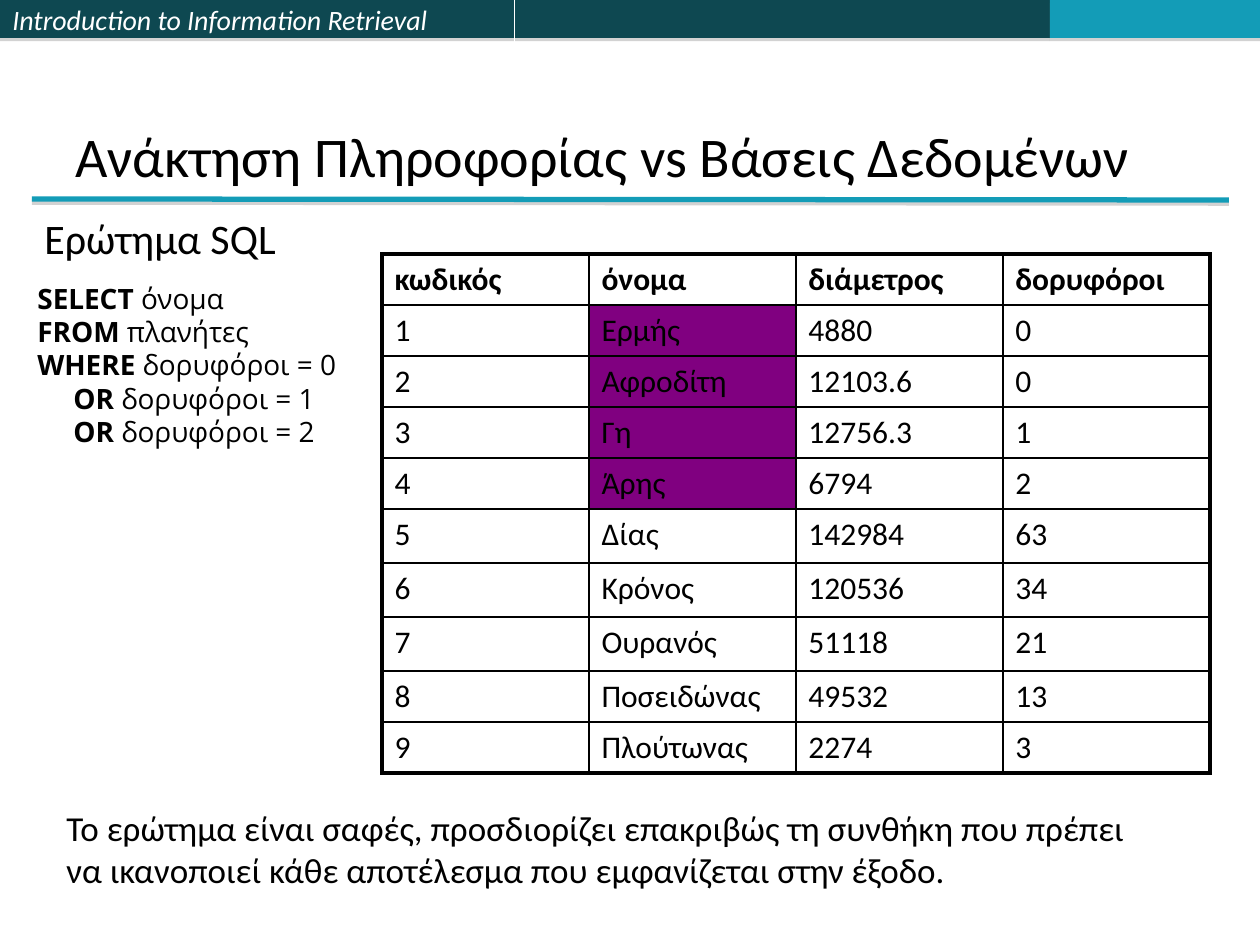
from lxml import etree
from pptx import Presentation
from pptx import util as u
from pptx.dml.color import RGBColor
from pptx.enum import shapes, text
from pptx.oxml.ns import qn

PX = 914400 // 126
BLACK, WHITE, DARK, TEAL, PURPLE = "000000", "FFFFFF", "0E4851", "139CB7", "800080"


def rgb(value):
    return RGBColor.from_string(value)


def write(frame, lines, size, font="Calibri", color=BLACK, italic=False, wrap=True,
          anchor=text.MSO_ANCHOR.TOP, spacing=None):
    """Fill a text frame; each line is a list of (words, bold) pairs."""
    frame.word_wrap = wrap
    frame.vertical_anchor = anchor
    for i, line in enumerate(lines):
        para = frame.add_paragraph() if i else frame.paragraphs[0]
        para.alignment = text.PP_ALIGN.LEFT
        if spacing:
            para.line_spacing = u.Pt(spacing)
        for words, bold in line:
            span = para.add_run()
            span.text = words
            span.font.size = u.Pt(size)
            span.font.name = font
            span.font.bold = bold
            span.font.italic = italic
            span.font.color.rgb = rgb(color)


deck = Presentation()
deck.slide_width, deck.slide_height = 1260 * PX, 945 * PX
page = deck.slides.add_slide(deck.slide_layouts[6])

# Header bars and title rule, all with a soft shadow below
shadowed = []
for left, width, color in [(0, 514, DARK), (515, 535, DARK), (1050, 210, TEAL)]:
    bar = page.shapes.add_shape(shapes.MSO_SHAPE.RECTANGLE, left * PX, 0, width * PX, 38 * PX)
    bar.fill.solid()
    bar.fill.fore_color.rgb = rgb(color)
    bar.line.fill.background()
    shadowed.append(bar)
write(shadowed[0].text_frame, [[("Introduction to Information Retrieval", False)]], 16,
      color=WHITE, italic=True, anchor=text.MSO_ANCHOR.MIDDLE)

rule = page.shapes.add_connector(shapes.MSO_CONNECTOR.STRAIGHT,
                                 32 * PX, 199 * PX, 1229 * PX, 200 * PX)
rule.line.color.rgb = rgb(TEAL)
rule.line.width = u.Pt(3)
shadowed.append(rule)

for shape in shadowed:
    effects = etree.SubElement(shape._element.spPr, qn("a:effectLst"))
    shadow = etree.SubElement(effects, qn("a:outerShdw"), dist=str(u.Pt(1.8)), dir="5400000",
                              rotWithShape="0")
    tint = etree.SubElement(shadow, qn("a:srgbClr"), val="808080")
    etree.SubElement(tint, qn("a:alpha"), val="35000")

title = page.shapes.add_textbox(63 * PX, 38 * PX, 1134 * PX, 157 * PX)
write(title.text_frame, [[("Ανάκτηση Πληροφορίας vs Βάσεις Δεδομένων", False)]], 32,
      anchor=text.MSO_ANCHOR.BOTTOM)

# Planet table
planets = [
    ("κωδικός", "όνομα", "διάμετρος", "δορυφόροι"),
    ("1", "Ερμής", "4880", "0"),
    ("2", "Αφροδίτη", "12103.6", "0"),
    ("3", "Γη", "12756.3", "1"),
    ("4", "Άρης", "6794", "2"),
    ("5", "Δίας", "142984", "63"),
    ("6", "Κρόνος", "120536", "34"),
    ("7", "Ουρανός", "51118", "21"),
    ("8", "Ποσειδώνας", "49532", "13"),
    ("9", "Πλούτωνας", "2274", "3"),
]
heights = [51] * 5 + [54] * 3 + [51] * 2
last_row, last_col = len(planets) - 1, len(planets[0]) - 1
table = page.shapes.add_table(len(planets), len(planets[0]), 382 * PX, 254 * PX,
                              828 * PX, sum(heights) * PX).table
for column in table.columns:
    column.width = 207 * PX
for r, values in enumerate(planets):
    table.rows[r].height = heights[r] * PX
    for c, value in enumerate(values):
        cell = table.cell(r, c)
        write(cell.text_frame, [[(value, r == 0)]], 18)
        edges = {"lnL": c == 0, "lnR": c == last_col, "lnT": r == 0, "lnB": r == last_row}
        for edge, outer in edges.items():
            border = etree.SubElement(cell._tc.get_or_add_tcPr(), qn("a:" + edge),
                                      w=str(u.Pt(2.25 if outer else 1)))
            paint = etree.SubElement(border, qn("a:solidFill"))
            etree.SubElement(paint, qn("a:srgbClr"), val=BLACK)
        if c == 1 and 1 <= r <= 4:
            cell.fill.solid()
            cell.fill.fore_color.rgb = rgb(PURPLE)
        else:
            cell.fill.background()

# SQL query
query = page.shapes.add_textbox(25 * PX, 275 * PX, 347 * PX, 183 * PX)
clauses = [("SELECT", " όνομα"), ("FROM", " πλανήτες"), ("WHERE", " δορυφόροι = 0"),
           ("OR", " δορυφόροι = 1"), ("OR", " δορυφόροι = 2")]
write(query.text_frame, [[(keyword, True), (rest, False)] for keyword, rest in clauses], 16,
      font="Open Sans", spacing=19.1)
for para in query.text_frame.paragraphs[3:]:
    para._p.get_or_add_pPr().set("marL", str(36 * PX))

conclusion = page.shapes.add_textbox(54 * PX, 800 * PX, 1100 * PX, 97 * PX)
write(conclusion.text_frame,
      [[("Το ερώτημα είναι σαφές, προσδιορίζει επακριβώς τη συνθήκη που πρέπει", False)],
       [("να ικανοποιεί κάθε αποτέλεσμα που εμφανίζεται στην έξοδο.", False)]], 20, wrap=False)

heading = page.shapes.add_textbox(32 * PX, 206 * PX, 260 * PX, 63 * PX)
write(heading.text_frame, [[("Ερώτημα SQL", False)]], 24, wrap=False)

deck.save("out.pptx")
